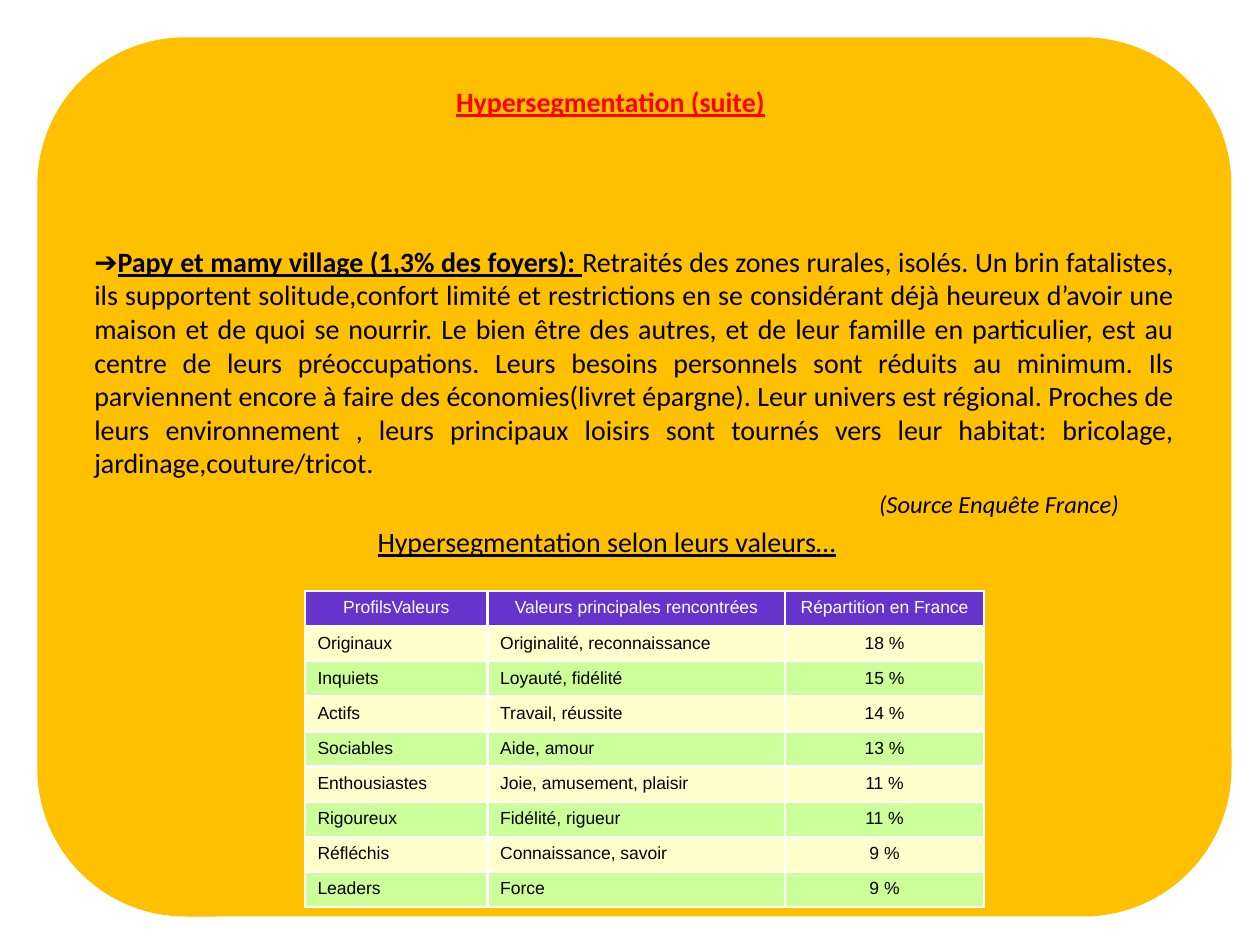
from typing import NamedTuple

from lxml.etree import SubElement
from pptx import Presentation
from pptx.dml.color import RGBColor
from pptx.enum.shapes import MSO_SHAPE
from pptx.enum.text import MSO_ANCHOR, MSO_AUTO_SIZE, PP_ALIGN
from pptx.oxml.ns import qn
from pptx.util import Inches, Pt

AMBER = RGBColor(0xFF, 0xC0, 0x00)
RED = RGBColor(0xFF, 0x00, 0x00)
BLACK = RGBColor(0x00, 0x00, 0x00)
WHITE = RGBColor(0xFF, 0xFF, 0xFF)
PURPLE = RGBColor(0x66, 0x33, 0xCC)
CREAM = RGBColor(0xFF, 0xFF, 0xCC)
GREEN = RGBColor(0xCC, 0xFF, 0x99)


class Profile(NamedTuple):
    name: str
    values: str
    share: str


HEADER = Profile("ProfilsValeurs", "Valeurs principales rencontrées", "Répartition en France")
PROFILES = [
    Profile("Originaux", "Originalité, reconnaissance", "18 %"),
    Profile("Inquiets", "Loyauté, fidélité", "15 %"),
    Profile("Actifs", "Travail, réussite", "14 %"),
    Profile("Sociables", "Aide, amour", "13 %"),
    Profile("Enthousiastes", "Joie, amusement, plaisir", "11 %"),
    Profile("Rigoureux", "Fidélité, rigueur", "11 %"),
    Profile("Réfléchis", "Connaissance, savoir", "9 %"),
    Profile("Leaders", "Force", "9 %"),
]
COLUMN_WIDTHS = (1.45, 2.36, 1.58)
ROW_HEIGHT = 2.51 / (len(PROFILES) + 1)

SEGMENT_NAME = "Papy et mamy village (1,3% des foyers): "
SEGMENT_TEXT = (
    "Retraités des zones rurales, isolés. Un brin fatalistes, ils supportent "
    "solitude,confort limité et restrictions en se considérant déjà heureux d’avoir "
    "une maison et de quoi se nourrir. Le bien être des autres, et de leur famille en "
    "particulier, est au centre de leurs préoccupations. Leurs besoins personnels sont "
    "réduits au minimum. Ils parviennent encore à faire des économies(livret épargne). "
    "Leur univers est régional. Proches de leurs environnement , leurs principaux "
    "loisirs sont tournés vers leur habitat: bricolage, jardinage,couture/tricot."
)


def format_paragraph(paragraph, alignment, size: float, color: RGBColor,
                     font_name: str = "Calibri", space_before: float = 0) -> None:
    paragraph.alignment = alignment
    paragraph.space_before = Pt(space_before)
    paragraph.font.name = font_name
    paragraph.font.size = Pt(size)
    paragraph.font.color.rgb = color


def draw_panel(slide) -> None:
    panel = slide.shapes.add_shape(MSO_SHAPE.ROUNDED_RECTANGLE, Inches(0.31), Inches(0.31),
                                   Inches(9.45), Inches(6.95))
    panel.adjustments[0] = 0.167
    panel.shadow.inherit = False
    panel.fill.solid()
    panel.fill.fore_color.rgb = AMBER
    panel.line.color.rgb = AMBER
    panel.line.width = Pt(2)
    frame = panel.text_frame
    frame.word_wrap = True
    frame.vertical_anchor = MSO_ANCHOR.TOP
    frame.margin_top = Inches(1.29)

    # Segment description
    description = frame.paragraphs[0]
    format_paragraph(description, PP_ALIGN.JUSTIFY, 16, BLACK)
    description.add_run().text = "➔"
    name = description.add_run()
    name.text = SEGMENT_NAME
    name.font.bold = name.font.underline = True
    description.add_run().text = SEGMENT_TEXT

    # Source, held back from the right edge
    source = frame.add_paragraph()
    source.text = "(Source Enquête France)"
    format_paragraph(source, PP_ALIGN.RIGHT, 14, BLACK, space_before=5.5)
    source.font.italic = True
    source._p.get_or_add_pPr().set("marR", str(Inches(0.44)))

    # Table heading
    heading = frame.add_paragraph()
    heading.text = "Hypersegmentation selon leurs valeurs…"
    format_paragraph(heading, PP_ALIGN.CENTER, 16, BLACK, space_before=3.5)
    heading.font.underline = True


def add_borders(cell) -> None:
    properties = cell._tc.get_or_add_tcPr()
    for index, side in enumerate(("lnL", "lnR", "lnT", "lnB")):
        border = properties.makeelement(qn(f"a:{side}"), {"w": str(Pt(1.5))})
        fill = SubElement(border, qn("a:solidFill"))
        SubElement(fill, qn("a:srgbClr"), val=str(WHITE))
        properties.insert(index, border)


def draw_table(slide) -> None:
    rows = [HEADER, *PROFILES]
    table = slide.shapes.add_table(len(rows), len(COLUMN_WIDTHS), Inches(2.42), Inches(4.69),
                                   Inches(sum(COLUMN_WIDTHS)),
                                   Inches(ROW_HEIGHT * len(rows))).table
    table.first_row = table.horz_banding = False
    for column, width in zip(table.columns, COLUMN_WIDTHS):
        column.width = Inches(width)
    for row_index, profile in enumerate(rows):
        is_header = row_index == 0
        background = PURPLE if is_header else (GREEN, CREAM)[row_index % 2]
        for column_index, text in enumerate(profile):
            cell = table.cell(row_index, column_index)
            cell.text = text
            cell.vertical_anchor = MSO_ANCHOR.MIDDLE
            cell.fill.solid()
            cell.fill.fore_color.rgb = background
            centred = is_header or column_index == 2
            paragraph = cell.text_frame.paragraphs[0]
            format_paragraph(paragraph, PP_ALIGN.CENTER if centred else PP_ALIGN.JUSTIFY,
                             10, WHITE if is_header else BLACK, "Arial")
            paragraph.line_spacing = 0.93
            add_borders(cell)


def place_title(slide) -> None:
    title = slide.shapes.title
    title.left, title.top = Inches(3.52), Inches(0.62)
    title.width, title.height = Inches(3.2), Inches(0.37)
    frame = title.text_frame
    frame.text = "Hypersegmentation (suite)"
    frame.auto_size = MSO_AUTO_SIZE.NONE
    frame.vertical_anchor = MSO_ANCHOR.TOP
    paragraph = frame.paragraphs[0]
    format_paragraph(paragraph, PP_ALIGN.LEFT, 16, RED)
    paragraph.font.bold = paragraph.font.underline = True
    # Bring the title in front of the panel
    slide.shapes._spTree.append(title._element)


def main() -> None:
    presentation = Presentation()
    presentation.slide_width, presentation.slide_height = Inches(10), Inches(7.5)
    slide = presentation.slides.add_slide(presentation.slide_layouts[5])
    draw_panel(slide)
    draw_table(slide)
    place_title(slide)
    presentation.save("out.pptx")


if __name__ == "__main__":
    main()
